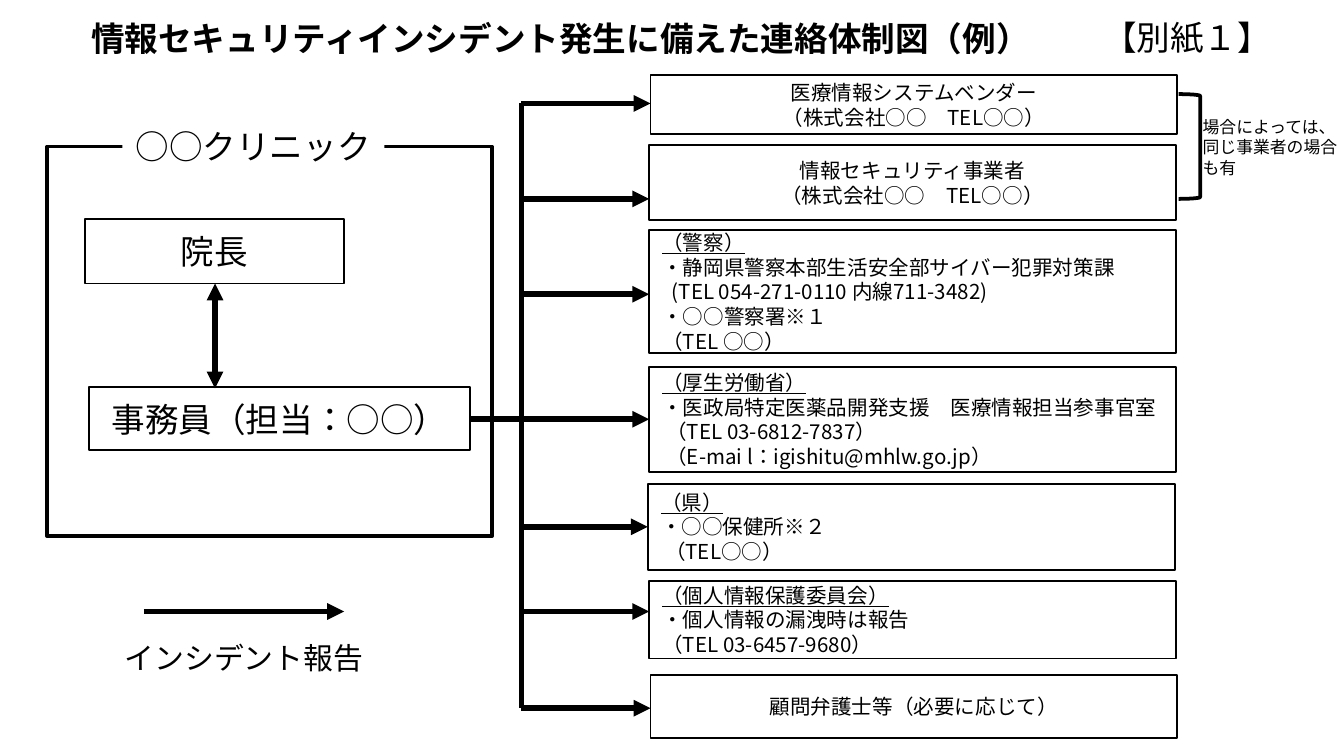
from copy import deepcopy
from dataclasses import dataclass

from lxml.etree import SubElement
from pptx import Presentation
from pptx.dml.color import RGBColor
from pptx.enum.lang import MSO_LANGUAGE_ID
from pptx.enum.shapes import MSO_CONNECTOR, MSO_SHAPE
from pptx.enum.text import MSO_ANCHOR, PP_ALIGN
from pptx.oxml.ns import qn
from pptx.util import Inches, Pt


@dataclass(frozen=True)
class Theme:
    """Colours, fonts, type sizes and line weights of the slide."""
    ink: RGBColor = RGBColor(0, 0, 0)
    paper: RGBColor = RGBColor(255, 255, 255)
    title_font: str = "Arial"
    font: str = "Noto Sans CJK JP"
    large: float = 18
    legend: float = 16
    body: float = 11
    note: float = 9
    thin: float = 1
    medium: float = 2
    thick: float = 3


THEME = Theme()

CONTACTS = [
    (4.84, 0.56, 0.44, 0.77, None, ["医療情報システムベンダー", "（株式会社○○　TEL○○）"]),
    (4.83, 1.08, 0.56, 1.48, None, ["情報セキュリティ事業者", "（株式会社○○　TEL○○）"]),
    (4.83, 1.71, 0.92, 2.19, "（警察）", [
        "・静岡県警察本部生活安全部サイバー犯罪対策課",
        ("(TEL 054-271-0110 内線711-3482)", 0.07),
        "・○○警察署※１\n（TEL ○○）"]),
    (4.83, 2.73, 0.78, 3.12, "（厚生労働省）", [
        "・医政局特定医薬品開発支援　医療情報担当参事官室",
        ("（TEL 03-6812-7837）", 0.03),
        ("（E-mai l：igishitu@mhlw.go.jp）", 0.03)]),
    (4.82, 3.6, 0.64, 3.92, "（県）", ["・○○保健所※２", ("（TEL○○）", 0.03)]),
    (4.83, 4.32, 0.58, 4.55, "（個人情報保護委員会）", [
        "・個人情報の漏洩時は報告", "（TEL 03-6457-9680）"]),
    (4.84, 5.02, 0.47, 5.27, None, ["顧問弁護士等（必要に応じて）"]),
]


def write(shape, lines, size=THEME.body, font=THEME.font, heading=None,
          align=PP_ALIGN.LEFT, anchor=MSO_ANCHOR.MIDDLE, bold=False):
    """Fill a shape with paragraphs, the heading underlined."""
    frame = shape.text_frame
    frame.word_wrap = True
    frame.vertical_anchor = anchor
    for index, line in enumerate([heading, *lines] if heading else lines):
        words, indent = line if isinstance(line, tuple) else (line, 0)
        paragraph = frame.add_paragraph() if index else frame.paragraphs[0]
        paragraph.alignment = align
        if indent:
            paragraph._p.get_or_add_pPr().set("marL", str(Inches(indent)))
        for row, part in enumerate(words.split("\n")):
            if row:
                paragraph.add_line_break()
                paragraph._p[-1].append(deepcopy(run._r.rPr))
            run = paragraph.add_run()
            run.text = part
            run.font.size = Pt(size)
            run.font.name = font
            run.font.bold = bold
            run.font.underline = bool(heading) and index == 0
            run.font.language_id = MSO_LANGUAGE_ID.JAPANESE
            run.font.color.rgb = THEME.ink
            SubElement(run._r.get_or_add_rPr(), qn("a:ea"), typeface=THEME.font)


def add_box(slide, left, top, width, height, weight=THEME.thin,
            preset=MSO_SHAPE.RECTANGLE):
    """Add an unfilled outlined shape."""
    box = slide.shapes.add_shape(
        preset, Inches(left), Inches(top), Inches(width), Inches(height))
    box.shadow.inherit = False
    box.fill.background()
    box.line.color.rgb = THEME.ink
    box.line.width = Pt(weight)
    return box


def add_label(slide, left, top, width, height, words, size):
    """Add a plain text box."""
    label = slide.shapes.add_textbox(
        Inches(left), Inches(top), Inches(width), Inches(height))
    write(label, [words], size=size, anchor=MSO_ANCHOR.TOP)
    return label


def add_line(slide, x1, y1, x2, y2, ends=("tailEnd",)):
    """Add a thick line with triangles at the named ends."""
    line = slide.shapes.add_connector(
        MSO_CONNECTOR.STRAIGHT, Inches(x1), Inches(y1), Inches(x2), Inches(y2))
    line.line.color.rgb = THEME.ink
    line.line.width = Pt(THEME.thick)
    outline = line.line._get_or_add_ln()
    for end in ends:
        SubElement(outline, qn(f"a:{end}"), type="triangle")
    SubElement(line._element.spPr, qn("a:effectLst"))


def add_header(slide, left, top, width, height):
    """Place the title and the attachment number."""
    title = slide.shapes.title
    title.left, title.top = Inches(left), Inches(top)
    title.width, title.height = Inches(width), Inches(height)
    write(title, ["情報セキュリティインシデント発生に備えた連絡体制図（例）"],
          size=THEME.large, font=THEME.title_font, align=PP_ALIGN.CENTER, bold=True)
    add_label(slide, left + width, top + 0.08, 1.69, 0.4, "【別紙１】", THEME.large)


def add_clinic(slide, left, top, width, height):
    """Draw the clinic frame with its director and clerk."""
    add_box(slide, left, top, width, height, weight=THEME.medium)
    name = add_label(slide, left + 0.56, top - 0.2, 1.95, 0.4,
                     "○○クリニック", THEME.large)
    name.fill.solid()
    name.fill.fore_color.rgb = THEME.paper
    director = add_box(slide, left + 0.28, top + 0.54, 1.93, 0.48)
    clerk = add_box(slide, left + 0.31, top + 1.79, 2.84, 0.47)
    for person, words in ((director, "院長"), (clerk, "事務員（担当：○○）")):
        write(person, [words], size=THEME.large, align=PP_ALIGN.CENTER)
    add_line(slide, left + 1.25, top + 1.02, left + 1.25, top + 1.8,
             ends=("headEnd", "tailEnd"))


def add_contacts(slide, width, trunk, clerk_edge, clerk_y):
    """Draw the contact boxes and the arrows branching to them."""
    for left, top, height, arrow_y, heading, lines in CONTACTS:
        contact = add_box(slide, left, top, width, height)
        write(contact, lines, heading=heading,
              align=PP_ALIGN.LEFT if heading else PP_ALIGN.CENTER)
        start = clerk_edge if arrow_y == clerk_y else trunk
        add_line(slide, start, arrow_y, left, arrow_y)
    add_line(slide, trunk, CONTACTS[0][3], trunk, CONTACTS[-1][3], ends=())


def add_vendor_note(slide, left, top, width, height):
    """Bracket the two vendors and add the remark."""
    add_box(slide, left, top, width, height, weight=THEME.medium,
            preset=MSO_SHAPE.RIGHT_BRACKET)
    add_label(slide, left + 0.08, top + 0.12, 1.26, 0.55,
              "場合によっては、同じ事業者の場合も有", THEME.note)


def add_legend(slide, left, top, width):
    """Explain the arrow."""
    add_line(slide, left + 0.24, top, left + 0.24 + 1.49, top)
    add_label(slide, left, top + 0.16, width, 0.37, "インシデント報告", THEME.legend)


def main():
    """Build the contact chart and save it."""
    deck = Presentation()
    deck.slide_width = Inches(10)
    deck.slide_height = deck.slide_width * 9 // 16
    slide = deck.slides.add_slide(deck.slide_layouts[5])
    add_header(slide, 0.23, 0, 7.88, 0.56)
    add_clinic(slide, 0.35, 1.09, 3.31, 2.9)
    add_contacts(slide, 3.92, trunk=3.88, clerk_edge=3.5, clerk_y=3.12)
    add_vendor_note(slide, 8.77, 0.7, 0.16, 0.78)
    add_legend(slide, 0.83, 4.55, 2.29)
    deck.save("out.pptx")


if __name__ == "__main__":
    main()
